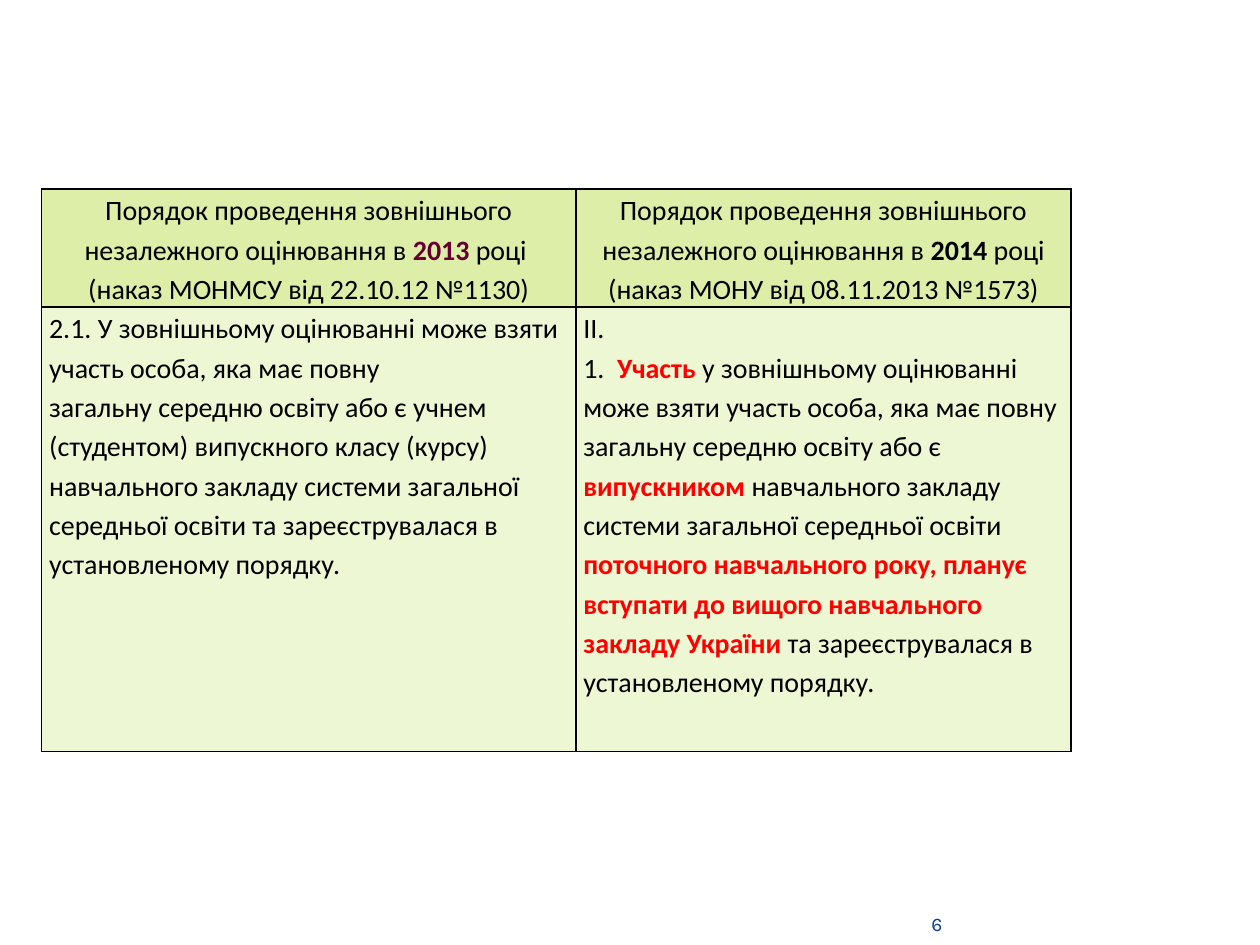
from dataclasses import dataclass

from lxml.etree import SubElement
from pptx import Presentation
from pptx.dml.color import RGBColor
from pptx.enum.text import MSO_ANCHOR, PP_ALIGN
from pptx.oxml.ns import qn
from pptx.util import Cm, Pt

COLOURS = {
    "text": "000000",
    "year": "660033",
    "change": "FF0000",
    "border": "000000",
    "header": "DCEEA7",
    "body": "EDF7D3",
    "number": "073E87",
}
TABLE_FONT = {"name": "Calibri", "size": Pt(16)}
NUMBER_FONT = {"name": "Karla", "size": Pt(11), "bold": False}
CELL_FORMAT = {
    "margin_left": Cm(0.15),
    "margin_right": Cm(0.15),
    "margin_top": 0,
    "margin_bottom": 0,
}
BOX_FORMAT = {
    "margin_left": 0,
    "margin_right": 0,
    "margin_top": 0,
    "margin_bottom": 0,
    "word_wrap": True,
    "vertical_anchor": MSO_ANCHOR.BOTTOM,
}


@dataclass
class Span:
    text: str
    colour: str = "text"
    bold: bool = False


@dataclass
class RowStyle:
    fill: str
    height: Cm
    alignment: PP_ALIGN
    anchor: MSO_ANCHOR


ROW_STYLES = [
    RowStyle("header", Cm(2.38), PP_ALIGN.CENTER, MSO_ANCHOR.MIDDLE),
    RowStyle("body", Cm(8.96), PP_ALIGN.LEFT, MSO_ANCHOR.TOP),
]
COLUMN_WIDTHS = [Cm(10.77), Cm(9.98)]
HEADING = "Порядок проведення зовнішнього незалежного оцінювання в "

# Rows of cells; each cell is a list of paragraphs made of spans
ORDER_COMPARISON = [
    [
        [[Span(HEADING), Span("2013", "year", True),
          Span(" році \n(наказ МОНМСУ від 22.10.12 №1130)")]],
        [[Span(HEADING), Span("2014 ", bold=True),
          Span("році (наказ МОНУ від 08.11.2013 №1573)")]],
    ],
    [
        [
            [Span("2.1. У зовнішньому оцінюванні може взяти участь особа, яка має повну")],
            [Span("загальну середню освіту або є учнем (студентом) випускного класу (курсу)")],
            [Span("навчального закладу системи загальної середньої освіти та зареєструвалася в")],
            [Span("установленому порядку.")],
        ],
        [
            [Span("ІІ.")],
            [
                Span("1.  "),
                Span("Участь", "change", True),
                Span(" у зовнішньому оцінюванні може взяти участь особа, "
                     "яка має повну загальну середню освіту або є "),
                Span("випускником ", "change", True),
                Span("навчального закладу системи загальної середньої освіти "),
                Span("поточного навчального року, планує вступати до вищого "
                     "навчального закладу України ", "change", True),
                Span("та зареєструвалася в установленому порядку."),
            ],
        ],
    ],
]


def apply_format(target, values: dict) -> None:
    for name, value in values.items():
        setattr(target, name, value)


def colour(name: str) -> RGBColor:
    return RGBColor.from_string(COLOURS[name])


def add_span(paragraph, span: Span, font_format: dict) -> None:
    for index, line in enumerate(span.text.split("\n")):
        if index:
            paragraph.add_line_break()
        run = paragraph.add_run()
        run.text = line
        apply_format(run.font, {**font_format, "bold": span.bold})
        run.font.color.rgb = colour(span.colour)


def add_borders(cell) -> None:
    properties = cell._tc.get_or_add_tcPr()
    for side in ("lnL", "lnR", "lnT", "lnB"):
        line = SubElement(properties, qn(f"a:{side}"), w=str(Pt(1)))
        fill = SubElement(line, qn("a:solidFill"))
        SubElement(fill, qn("a:srgbClr"), val=COLOURS["border"])


def fill_cell(cell, paragraphs: list[list[Span]], style: RowStyle) -> None:
    add_borders(cell)
    cell.fill.solid()
    cell.fill.fore_color.rgb = colour(style.fill)
    apply_format(cell, {**CELL_FORMAT, "vertical_anchor": style.anchor})
    frame = cell.text_frame
    for index, spans in enumerate(paragraphs):
        paragraph = frame.add_paragraph() if index else frame.paragraphs[0]
        apply_format(paragraph, {"alignment": style.alignment, "line_spacing": 1.15})
        for span in spans:
            add_span(paragraph, span, TABLE_FONT)


def add_comparison_table(slide) -> None:
    table = slide.shapes.add_table(
        len(ROW_STYLES), len(COLUMN_WIDTHS), Cm(0.84), Cm(3.81),
        sum(COLUMN_WIDTHS), sum(style.height for style in ROW_STYLES),
    ).table
    apply_format(table, {"first_row": False, "horz_banding": False})
    for column, width in zip(table.columns, COLUMN_WIDTHS):
        column.width = width
    for row, style, contents in zip(table.rows, ROW_STYLES, ORDER_COMPARISON):
        row.height = style.height
        for cell, paragraphs in zip(row.cells, contents):
            fill_cell(cell, paragraphs, style)


def add_slide_number(slide) -> None:
    box = slide.shapes.add_textbox(Cm(17.37), Cm(18.21), Cm(1.63), Cm(0.64))
    apply_format(box.text_frame, BOX_FORMAT)
    paragraph = box.text_frame.paragraphs[0]
    paragraph.alignment = PP_ALIGN.RIGHT
    add_span(paragraph, Span("6", "number"), NUMBER_FONT)


def main() -> None:
    presentation = Presentation()
    presentation.slide_width = Cm(25.4)
    presentation.slide_height = Cm(19.05)
    # Blank layout, as the slide has no title
    slide = presentation.slides.add_slide(presentation.slide_layouts[6])
    add_comparison_table(slide)
    add_slide_number(slide)
    presentation.save("out.pptx")


if __name__ == "__main__":
    main()
